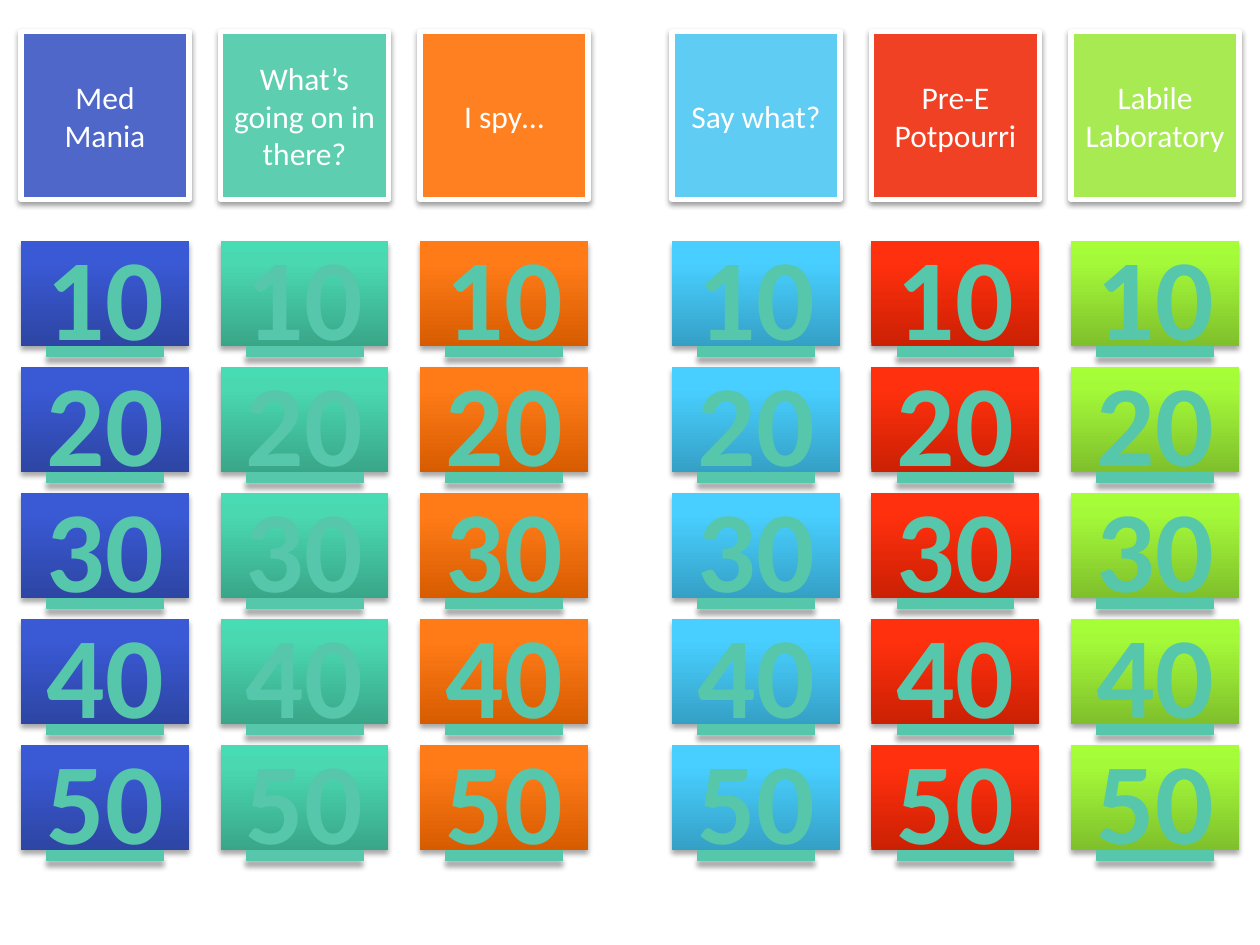
import copy

import lxml.etree
import pptx
import pptx.dml.color
import pptx.enum.shapes
import pptx.enum.text
import pptx.oxml.ns
import pptx.util

Pt = pptx.util.Pt
qn = pptx.oxml.ns.qn

COLORS = {
    "white": "FFFFFF",
    "black": "000000",
    "score": "56C7AA",
    "blue": "4E67C8",
    "teal": "5DCEAF",
    "orange": "FF8021",
    "sky": "5ECCF3",
    "red": "F14124",
    "lime": "A7EA52",
}
FADES = {
    "blue": ("2D45A3", "3A59D4", "3758D7"),
    "teal": ("39A688", "4AD8B1", "47DCB3"),
    "orange": ("D75C00", "FF7B18", "FF7C19"),
    "sky": ("35A0C6", "48CFFF", "49CFFF"),
    "red": ("CB2004", "FF300D", "FF310F"),
    "lime": ("7FC02C", "A4F939", "A6FE36"),
}
STOPS = (0, 0.8, 1)
TOPICS = [
    ("blue", ["Med", "Mania"]),
    ("teal", ["What’s going on in there?"]),
    ("orange", ["I spy…"]),
    ("sky", ["Say what?"]),
    ("red", ["Pre-E Potpourri"]),
    ("lime", ["Labile Laboratory"]),
]
SCORES = (10, 20, 30, 40, 50)
LEFT, WIDTH, STEP, AISLE = 12, 96, 114, 30
HEAD_TOP, CELL_TOP, CELL_HIGH, ROW_STEP = 18, 138, 60, 72


def rgb(code):
    return pptx.dml.color.RGBColor.from_string(code)


class Board:
    font = "Calibri"

    def __init__(self, slide):
        self.slide = slide

    def box(self, x, y, wide, high, drop, alpha):
        shape = self.slide.shapes.add_shape(
            pptx.enum.shapes.MSO_SHAPE.RECTANGLE, Pt(x), Pt(y), Pt(wide), Pt(high)
        )
        shape.shadow.inherit = False
        effects = shape.element.spPr.find(qn("a:effectLst"))
        shade = lxml.etree.SubElement(
            effects, qn("a:outerShdw"), blurRad=str(Pt(3.15)), dist=str(Pt(drop)),
            dir="5400000", rotWithShape="0",
        )
        tint = lxml.etree.SubElement(shade, qn("a:srgbClr"), val=COLORS["black"])
        lxml.etree.SubElement(tint, qn("a:alpha"), val=str(alpha * 1000))
        return shape

    def label(self, shape, lines, size, color):
        frame = shape.text_frame
        frame.word_wrap = True
        frame.vertical_anchor = pptx.enum.text.MSO_ANCHOR.MIDDLE
        runs = []
        for i, line in enumerate(lines):
            para = frame.add_paragraph() if i else frame.paragraphs[0]
            para.alignment = pptx.enum.text.PP_ALIGN.CENTER
            run = para.add_run()
            run.text = line
            run.font.name = self.font
            run.font.size = Pt(size)
            run.font.color.rgb = rgb(COLORS[color])
            runs.append(run)
        return runs

    def head(self, x, lines, color):
        shape = self.box(x, HEAD_TOP, WIDTH, WIDTH, 1.57, 38)
        shape.fill.solid()
        shape.fill.fore_color.rgb = rgb(COLORS[color])
        shape.line.color.rgb = rgb(COLORS["white"])
        shape.line.width = Pt(3)
        self.label(shape, lines, 18, "white")

    def cell(self, x, y, score, color):
        shape = self.box(x, y, WIDTH, CELL_HIGH, 1.81, 35)
        self.fade(shape, FADES[color])
        shape.line.fill.background()
        for run in self.label(shape, [str(score)], 66, "score"):
            run.font.bold = True
            run.font.underline = True
            run.font._element.set("spc", "50")

    def fade(self, shape, codes):
        shape.fill.gradient()
        shape.fill.gradient_angle = 90
        stops = shape.element.spPr.find(qn("a:gradFill")).find(qn("a:gsLst"))
        stops.append(copy.deepcopy(stops[-1]))
        for stop, place, code in zip(shape.fill.gradient_stops, STOPS, codes):
            stop.position = place
            stop.color.rgb = rgb(code)


def main():
    deck = pptx.Presentation()
    deck.slide_width, deck.slide_height = Pt(720), Pt(540)
    board = Board(deck.slides.add_slide(deck.slide_layouts[6]))
    for col, (color, lines) in enumerate(TOPICS):
        x = LEFT + col * STEP + (AISLE if col >= 3 else 0)
        board.head(x, lines, color)
        for row, score in enumerate(SCORES):
            board.cell(x, CELL_TOP + row * ROW_STEP, score, color)
    deck.save("out.pptx")


if __name__ == "__main__":
    main()
